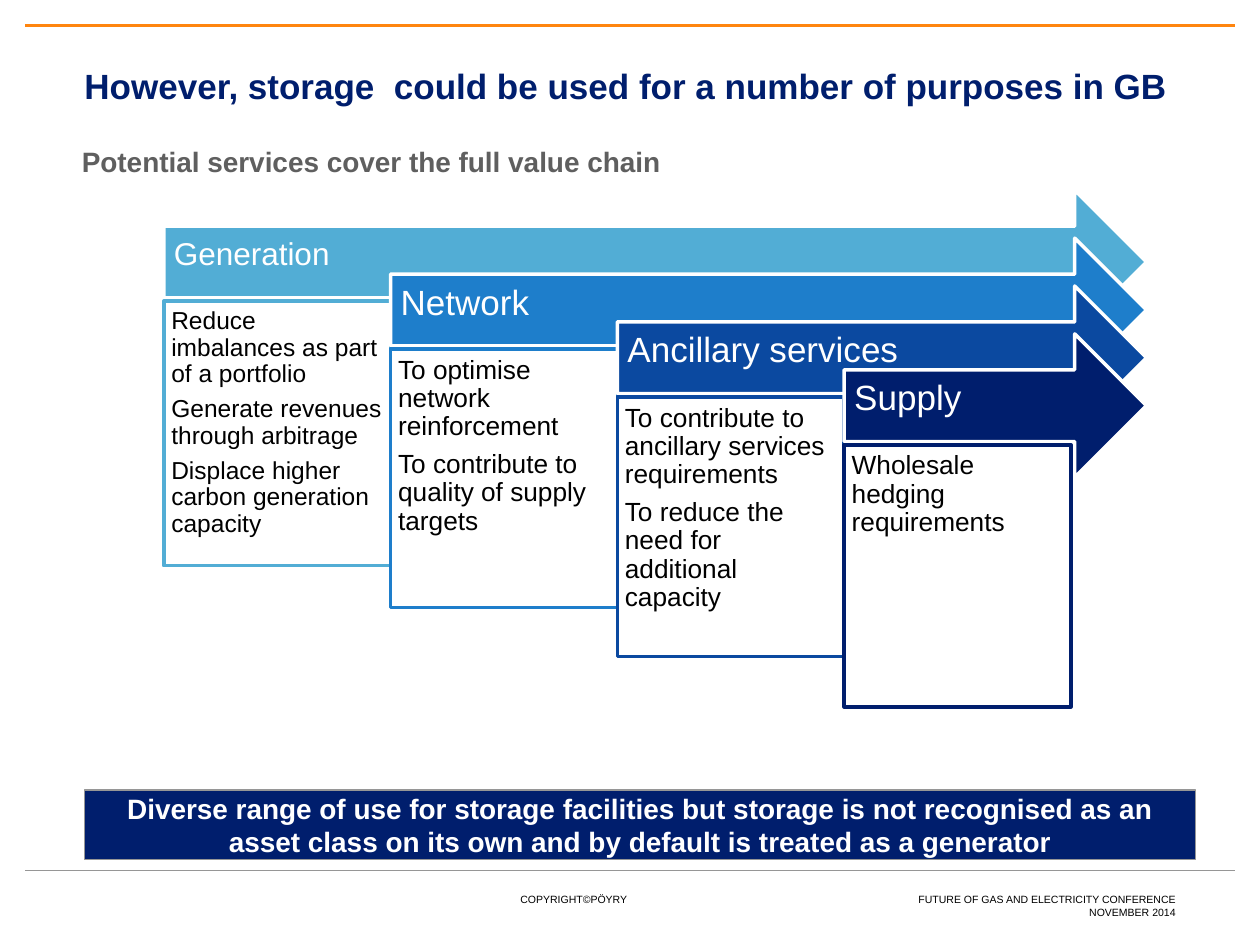
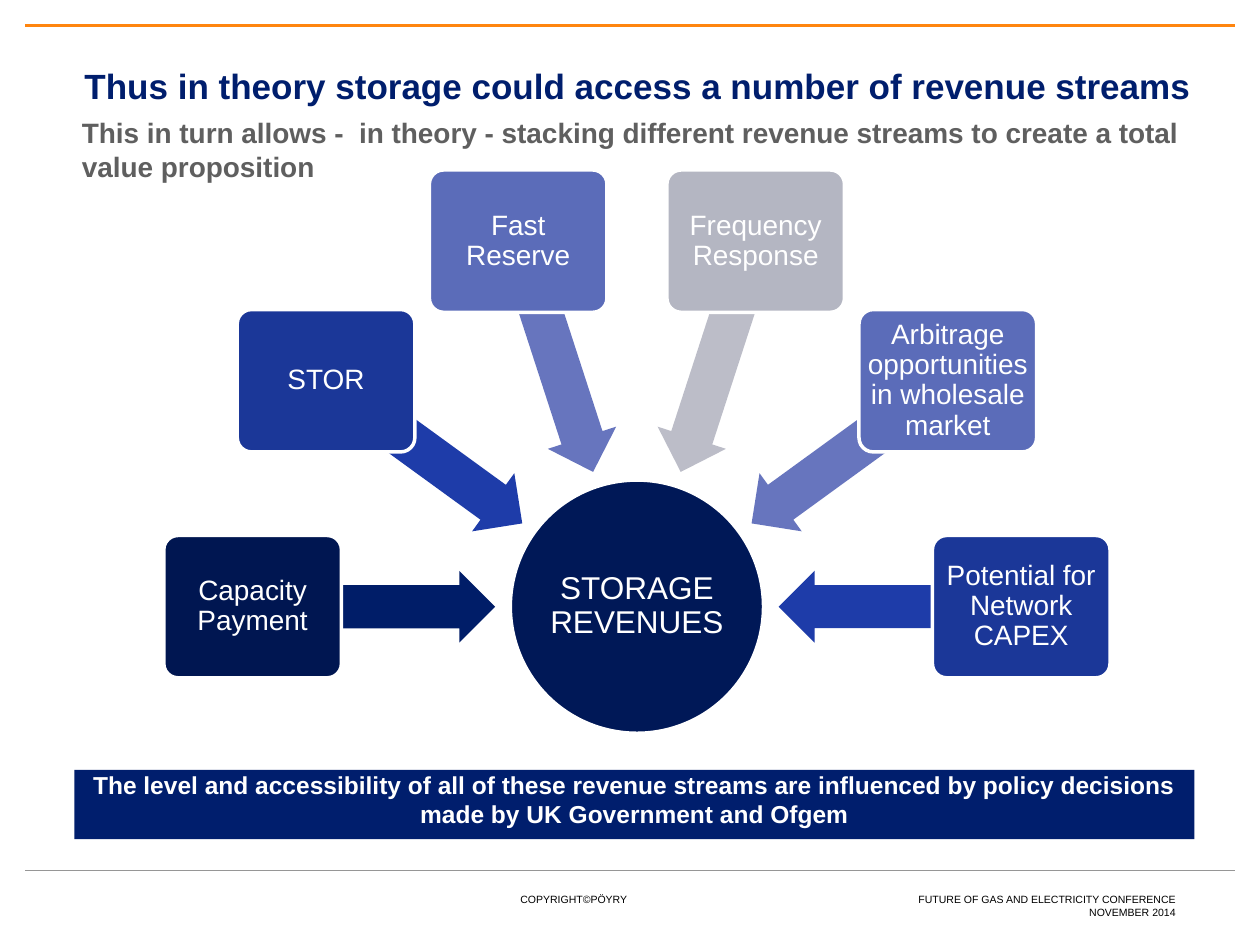
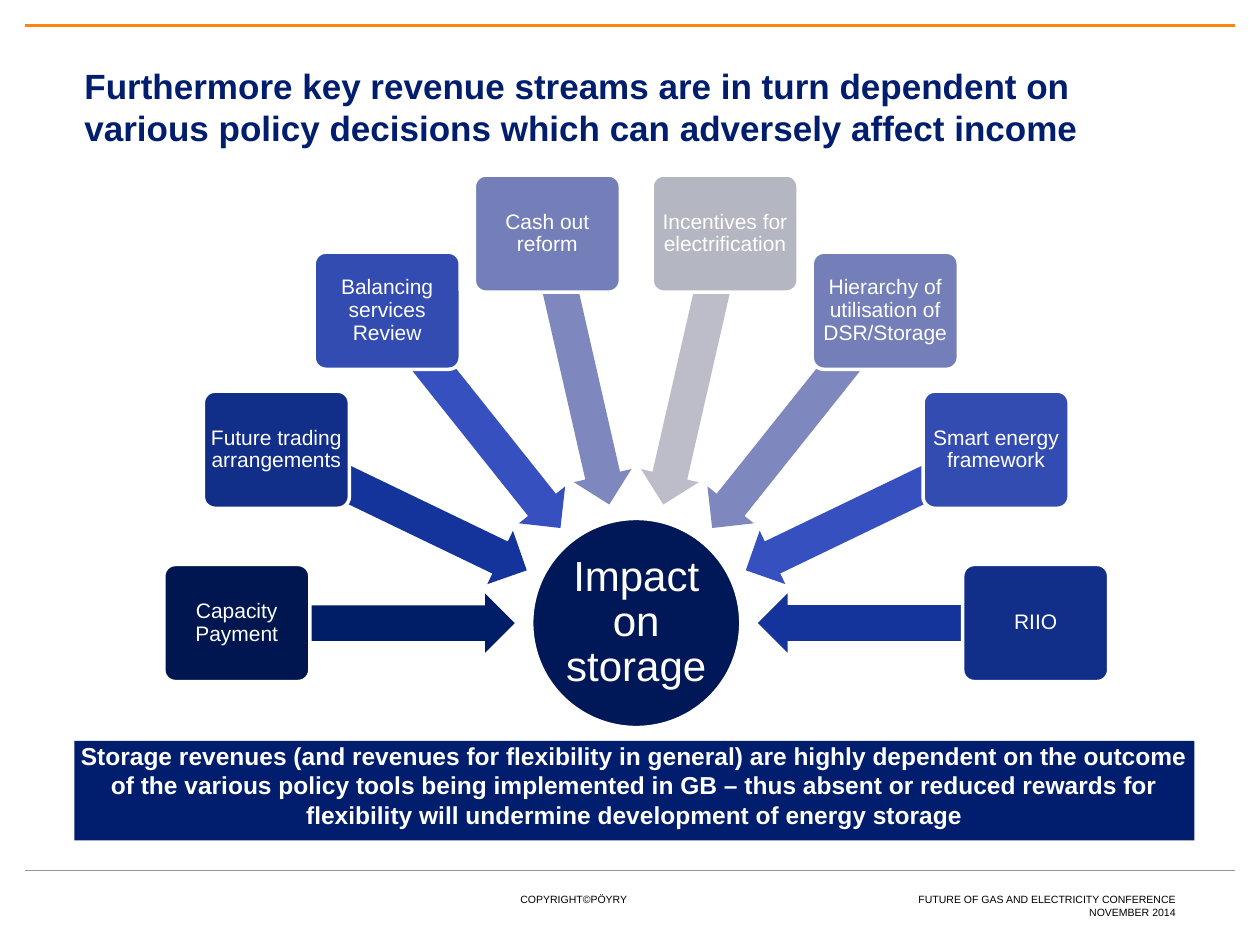
from math import cos, radians, sin

from lxml import etree
from pptx import Presentation
from pptx import util as u
from pptx.dml.color import RGBColor
from pptx.enum import shapes, text
from pptx.oxml import ns

WIDTH, HEIGHT = 10, 7.5
FONT = "Arial"
NAVY, WHITE, BLACK, GREY, RULE, ORANGE = "001E6D", "FFFFFF", "000000", "5F5F5F", "969696", "FF850E"
LEFT, CENTER, RIGHT = text.PP_ALIGN.LEFT, text.PP_ALIGN.CENTER, text.PP_ALIGN.RIGHT
TOP, MIDDLE = text.MSO_ANCHOR.TOP, text.MSO_ANCHOR.MIDDLE
KIND = shapes.MSO_SHAPE

FOOTERS = [
    ("COPYRIGHT©PÖYRY", (4.13, 7.08, 0.9, 0.12), LEFT),
    ("FUTURE OF GAS AND ELECTRICITY CONFERENCE", (5.87, 7.08, 3.46, 0.12), RIGHT),
    ("NOVEMBER 2014", (5.87, 7.18, 3.46, 0.12), RIGHT),
]

CHAIN = dict(
    title="However, storage  could be used for a number of purposes in GB",
    subtitle=("Potential services cover the full value chain", 1.15),
    message="Diverse range of use for storage facilities but storage is not recognised "
            "as an asset class on its own and by default is treated as a generator",
    stages=[
        ("Generation", "52ADD5", 18, 14, 2.1, [
            "Reduce imbalances as part of a portfolio",
            "Generate revenues through arbitrage",
            "Displace higher carbon generation capacity"]),
        ("Network", "1E7ECB", 20, 15, 2.05, [
            "To optimise network reinforcement",
            "To contribute to quality of supply targets"]),
        ("Ancillary services", "0B49A0", 20, 15, 2.06, [
            "To contribute to ancillary services requirements",
            "To reduce the need for additional capacity"]),
        ("Supply", NAVY, 20, 15, 2.08, ["Wholesale hedging requirements"]),
    ],
)

RADIALS = [
    dict(
        title="Thus in theory storage could access a number of revenue streams",
        subtitle=("This in turn allows -  in theory - stacking different revenue streams "
                  "to create a total value proposition", 0.92),
        message="The level and accessibility of all of these revenue streams are influenced "
                "by policy decisions made by UK Government and Ofgem",
        band=(6.11, 0.55),
        hub=("STORAGE REVENUES", 18, 2.01, (5.055, 4.815)),
        box=(1.41, 1.13, 3.05, 16),
        arrow=(1.93, 0.57, 2.09),
        spokes=[
            ("Capacity Payment", "001651", "001D68"),
            ("STOR", "1B3798", "1E3CA9"),
            ("Fast Reserve", "5B6CB9", "6775BE"),
            ("Frequency Response", "B4B6C2", "BCBDC8"),
            ("Arbitrage opportunities in wholesale market", "5B6CB9", "6775BE"),
            ("Potential for Network CAPEX", "1B3798", "1E3CA9"),
        ],
    ),
    dict(
        title="Furthermore key revenue streams are in turn dependent on various policy "
              "decisions which can adversely affect income",
        subtitle=None,
        message="Storage revenues (and revenues for flexibility in general) are highly "
                "dependent on the outcome of the various policy tools being implemented in "
                "GB – thus absent or reduced rewards for flexibility will undermine "
                "development of energy storage",
        band=(5.88, 0.79),
        hub=("Impact on storage", 24, 1.66, (5.05, 4.945)),
        box=(1.16, 0.93, 3.17, 12),
        arrow=(2.21, 0.47, 2.07),
        spokes=[
            ("Capacity Payment", "001651", "001D68"),
            ("Future trading arrangements", "112E89", "14339B"),
            ("Balancing services Review", "334CB1", "3750BF"),
            ("Cash out reform", "747FB9", "7F88BE"),
            ("Incentives for electrification", "B4B6C2", "BCBDC8"),
            ("Hierarchy of utilisation of DSR/Storage", "747FB9", "7F88BE"),
            ("Smart energy framework", "334CB1", "3750BF"),
            ("RIIO", "112E89", "14339B"),
        ],
    ),
]


def color(value):
    return RGBColor.from_string(value)


def inches(values):
    return [u.Inches(value) for value in values]


def write(shape, lines, size, ink, bold=False, align=LEFT, anchor=TOP,
          insets=(0, 0, 0, 0), tight=False):
    frame = shape.text_frame
    frame.word_wrap = True
    frame.vertical_anchor = anchor
    frame.margin_left, frame.margin_top, frame.margin_right, frame.margin_bottom = inches(insets)
    frame.text = "\n".join(lines)
    for para in frame.paragraphs:
        para.alignment = align
        if tight:
            para.line_spacing = 0.9
            para.space_after = u.Pt(size * 0.35)
        for span in para.runs:
            span.font.name = FONT
            span.font.size = u.Pt(size)
            span.font.bold = bold
            span.font.color.rgb = color(ink)


def add_text(page, place, content, size, ink, **style):
    write(page.shapes.add_textbox(*inches(place)), [content], size, ink, **style)


def add_block(page, kind, place, fill, line=None, width=2, adjust=()):
    shape = page.shapes.add_shape(kind, *inches(place))
    shape.shadow.inherit = False
    shape.fill.solid()
    shape.fill.fore_color.rgb = color(fill)
    if line:
        shape.line.color.rgb = color(line)
        shape.line.width = u.Pt(width)
    else:
        shape.line.fill.background()
    for index, value in enumerate(adjust):
        shape.adjustments[index] = value
    return shape


def add_rule(page, top, ink, width):
    margin = WIDTH * 0.02
    rule = page.shapes.add_connector(
        shapes.MSO_CONNECTOR.STRAIGHT, *inches((margin, top, WIDTH - margin, top)))
    rule.line.color.rgb = color(ink)
    rule.line.width = u.Pt(width)
    etree.SubElement(rule._element.spPr, ns.qn("a:effectLst"))


def centered(x, y, width, height):
    return x - width / 2, y - height / 2, width, height


def add_page(deck, content):
    page = deck.slides.add_slide(deck.slide_layouts[6])
    add_rule(page, 6.91, RULE, 0.25)
    add_rule(page, 0.2, ORANGE, 1.5)
    for label, place, align in FOOTERS:
        add_text(page, place, label, 6, BLACK, align=align, anchor=MIDDLE)
    add_text(page, (0.67, 0.51, 8.89, 1.18), content["title"], 20, NAVY, bold=True)
    if content["subtitle"]:
        subtitle, top = content["subtitle"]
        add_text(page, (0.65, top, 8.9, 0.63), subtitle, 16, GREY, bold=True)
    return page


def add_chain(deck, content):
    page = add_page(deck, content)
    left, top, column, step, right = 1.3, 1.51, 1.8, 0.38, 9.1
    for index, (name, fill, name_size, size, height, uses) in enumerate(content["stages"]):
        x, y = left + column * index, top + step * index
        arrow = add_block(page, KIND.RIGHT_ARROW, (x, y, right - x, 1.14), fill, WHITE,
                          adjust=(0.5, 0.5))
        write(arrow, [name], name_size, WHITE, anchor=MIDDLE,
              insets=(0.08, 0.08, 0.28, 0.18), tight=True)
        box = add_block(page, KIND.RECTANGLE, (x, y + 0.88, column, height), WHITE, fill)
        write(box, uses, size, BLACK, insets=(0.06,) * 4, tight=True)
    band = add_block(page, KIND.RECTANGLE, (0.67, 6.27, 8.82, 0.55), NAVY, RULE, 0.75)
    write(band, [content["message"]], 16, WHITE, bold=True, align=CENTER, anchor=MIDDLE,
          insets=(0.04,) * 4)


def add_radial(deck, content):
    page = add_page(deck, content)
    name, size, diameter, (hub_x, hub_y) = content["hub"]
    hub = add_block(page, KIND.OVAL, centered(hub_x, hub_y, diameter, diameter), "001857", WHITE)
    write(hub, [name], size, WHITE, align=CENTER, anchor=MIDDLE, insets=(0.01,) * 4, tight=True)

    box_width, box_height, box_radius, box_size = content["box"]
    arrow_width, arrow_height, arrow_radius = content["arrow"]
    step = 180 / (len(content["spokes"]) - 1)
    for index, (label, box_fill, arrow_fill) in enumerate(content["spokes"]):
        angle = 180 + step * index
        dx, dy = cos(radians(angle)), sin(radians(angle))
        arrow = add_block(
            page, KIND.LEFT_ARROW,
            centered(hub_x + arrow_radius * dx, hub_y + arrow_radius * dy,
                     arrow_width, arrow_height),
            arrow_fill, adjust=(0.6, 0.5))
        arrow.rotation = angle % 360
        box = add_block(
            page, KIND.ROUNDED_RECTANGLE,
            centered(hub_x + box_radius * dx, hub_y + box_radius * dy, box_width, box_height),
            box_fill, WHITE, adjust=(0.1,))
        write(box, [label], box_size, WHITE, align=CENTER, anchor=MIDDLE,
              insets=(0.02, 0.03, 0.02, 0.03), tight=True)

    top, height = content["band"]
    band = add_block(page, KIND.RECTANGLE, (0.59, top, 8.89, height), NAVY)
    write(band, [content["message"]], 14, WHITE, bold=True, align=CENTER)


def main():
    deck = Presentation()
    deck.slide_width, deck.slide_height = inches((WIDTH, HEIGHT))
    add_chain(deck, CHAIN)
    for content in RADIALS:
        add_radial(deck, content)
    deck.save("out.pptx")


if __name__ == "__main__":
    main()
